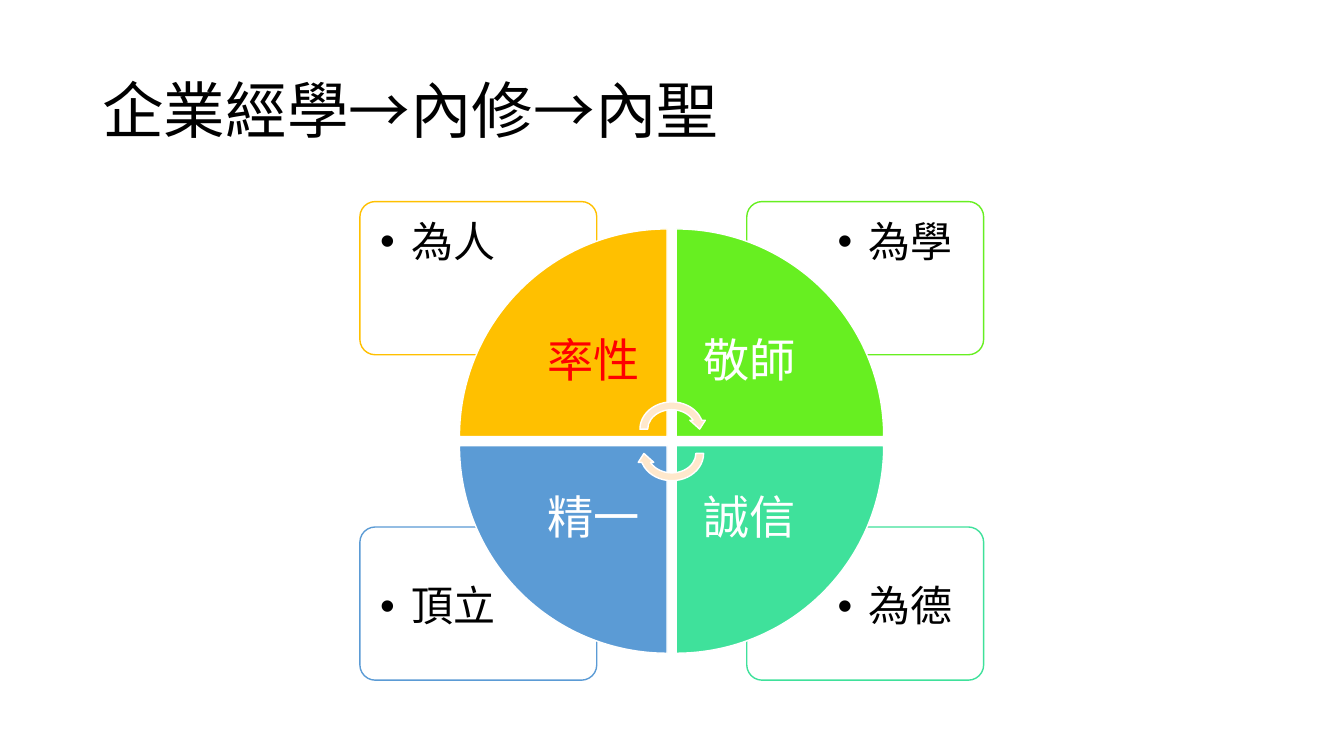
from lxml.etree import SubElement
from pptx import Presentation
from pptx.dml.color import RGBColor
from pptx.enum.shapes import MSO_SHAPE
from pptx.enum.text import MSO_ANCHOR, PP_ALIGN
from pptx.oxml.ns import qn
from pptx.util import Cm, Pt

FONT = "Noto Sans CJK SC"
BLACK = RGBColor(0x00, 0x00, 0x00)
WHITE = RGBColor(0xFF, 0xFF, 0xFF)
RED = RGBColor(0xFF, 0x00, 0x00)
GOLD = RGBColor(0xFF, 0xC0, 0x00)
LIME = RGBColor(0x67, 0xEF, 0x21)
MINT = RGBColor(0x3F, 0xE1, 0x9B)
BLUE = RGBColor(0x5B, 0x9B, 0xD5)
CREAM = RGBColor(0xFF, 0xE8, 0xCC)

deck = Presentation()
deck.slide_width, deck.slide_height = Cm(33.87), Cm(19.05)
slide = deck.slides.add_slide(deck.slide_layouts[6])


def add_form(kind, left, top, width, height, fill, line):
    form = slide.shapes.add_shape(kind, Cm(left), Cm(top), Cm(width), Cm(height))
    form.shadow.inherit = False
    form.fill.solid()
    form.fill.fore_color.rgb = fill
    form.line.color.rgb = line
    form.line.width = Pt(1)
    return form


def add_text(text, left, top, width, height, size, color, pad, anchor):
    """Add a one-line text box and return its paragraph."""
    box = slide.shapes.add_textbox(Cm(left), Cm(top), Cm(width), Cm(height))
    frame = box.text_frame
    frame.word_wrap = True
    frame.vertical_anchor = anchor
    frame.margin_left = frame.margin_right = Cm(pad[0])
    frame.margin_top = frame.margin_bottom = Cm(pad[1])
    para = frame.paragraphs[0]
    para.line_spacing = 0.9
    run = para.add_run()
    run.text = text
    run.font.size = Pt(size)
    run.font.color.rgb = color
    run.font.name = FONT
    SubElement(run.font._element, qn("a:ea")).set("typeface", FONT)
    return para


add_text("企業經學→內修→內聖", 2.33, 1.01, 29.21, 3.68, 44, BLACK,
         (0.25, 0.13), MSO_ANCHOR.MIDDLE)

# Clockwise from top left: column, row, colour, wedge word, word colour, card word
parts = [
    (0, 0, GOLD, "率性", RED, "為人"),
    (1, 0, LIME, "敬師", WHITE, "為學"),
    (1, 1, MINT, "誠信", WHITE, "為德"),
    (0, 1, BLUE, "精一", WHITE, "頂立"),
]

# Corner cards, bottom right first
for col, row, color, _, _, word in sorted(parts, key=lambda p: (-p[1], -p[0])):
    card = add_form(MSO_SHAPE.ROUNDED_RECTANGLE, 9.07 + 9.75 * col,
                    5.08 + 8.2 * row, 5.97, 3.86, WHITE, color)
    card.adjustments[0] = 0.1
    tint = card.fill._xPr.find(qn("a:solidFill"))[0]
    SubElement(tint, qn("a:alpha")).set("val", "90000")
    para = add_text(word, 9.17 + 11.53 * col, 5.16 + 9.19 * row, 4.01, 2.74,
                    30, BLACK, (0.41, 0.41), MSO_ANCHOR.TOP)
    props = para._p.get_or_add_pPr()
    props.set("marL", str(Cm(0.79)))
    props.set("indent", str(Cm(-0.79)))
    SubElement(props, qn("a:buFont")).set("typeface", "Arial")
    SubElement(props, qn("a:buChar")).set("char", "•")

# Four wedges of the wheel, each a quarter turn on
for turn, (col, row, color, word, ink, _) in enumerate(parts):
    wedge = add_form(MSO_SHAPE.PIE_WEDGE, 11.58 + 5.46 * col, 5.77 + 5.46 * row,
                     5.23, 5.23, color, WHITE)
    wedge.rotation = 90 * turn
    para = add_text(word, 13.11 + 3.93 * col, 7.29 + 3.94 * row, 3.71, 3.71,
                    33, ink, (0.66, 0.66), MSO_ANCHOR.MIDDLE)
    para.alignment = PP_ALIGN.CENTER

# Turning arrows at the hub
for top, angle in ((10.03, 0), (10.64, 180)):
    arrow = add_form(MSO_SHAPE.CIRCULAR_ARROW, 16.03, top, 1.8, 1.57, CREAM, WHITE)
    arrow.rotation = angle

deck.save("out.pptx")
